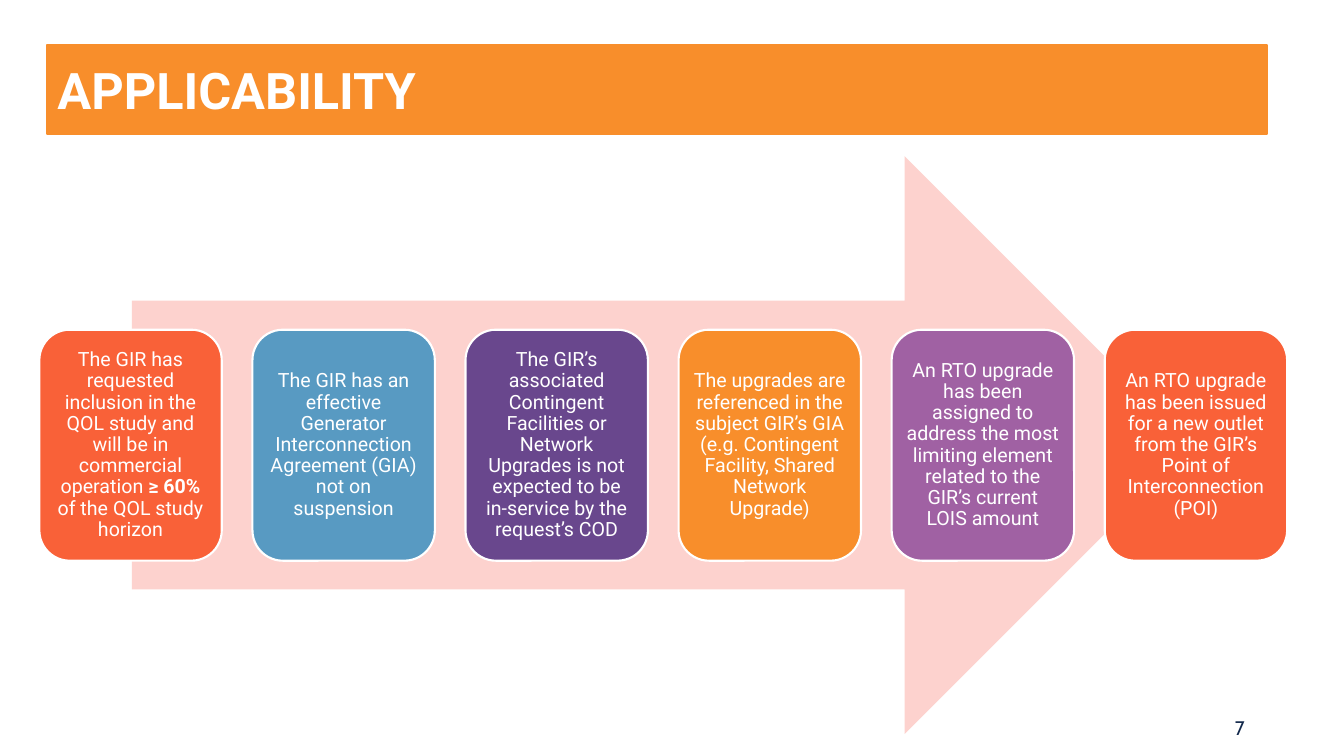
from dataclasses import dataclass

from lxml import etree
from pptx import Presentation
from pptx import util as u
from pptx.dml.color import RGBColor
from pptx.enum import shapes, text
from pptx.oxml.ns import qn


@dataclass(frozen=True)
class Theme:
    orange: str = "F88E2B"
    coral: str = "F96138"
    blue: str = "589AC2"
    purple: str = "69478D"
    violet: str = "A061A3"
    pink: str = "FDD2CE"
    navy: str = "12284B"
    white: str = "FFFFFF"
    font: str = "Roboto"
    number_font: str = "Cabin"
    title_size: float = 36
    body_size: float = 14
    outline: float = 1.5


@dataclass(frozen=True)
class Box:
    left: float
    top: float
    width: float
    height: float

    def lengths(self):
        return [u.Pt(n) for n in (self.left, self.top, self.width, self.height)]


THEME = Theme()
CONDITIONS = [
    (THEME.coral, [("The GIR has requested inclusion in the QOL study and will be "
                    "in commercial operation ", False),
                   ("≥ 60%", True), (" of the QOL study horizon", False)]),
    (THEME.blue, [("The GIR has an effective Generator Interconnection Agreement "
                   "(GIA) not on suspension", False)]),
    (THEME.purple, [("The GIR’s associated Contingent Facilities or Network Upgrades "
                     "is not expected to be in-service by the request’s COD", False)]),
    (THEME.orange, [("The upgrades are referenced in the subject GIR’s GIA (e.g. "
                     "Contingent Facility, Shared Network Upgrade)", False)]),
    (THEME.violet, [("An RTO upgrade has been assigned to address the most limiting "
                     "element related to the GIR’s current LOIS amount", False)]),
    (THEME.coral, [("An RTO upgrade has been issued for a new outlet from the GIR’s "
                    "Point of Interconnection (POI)", False)]),
]


def apply(target, values):
    for name, value in values.items():
        setattr(target, name, value)


def paint(shape, fill, line=None):
    shape.fill.solid()
    shape.fill.fore_color.rgb = RGBColor.from_string(fill)
    if line is None:
        shape.line.fill.background()
    else:
        shape.line.color.rgb = RGBColor.from_string(line)
        shape.line.width = u.Pt(THEME.outline)


def write(shape, runs, size, color, font, align, anchor, margins, spacing=1.0):
    horizontal, vertical = margins
    frame = shape.text_frame
    apply(frame, {
        "word_wrap": True,
        "auto_size": text.MSO_AUTO_SIZE.NONE,
        "vertical_anchor": anchor,
        "margin_left": u.Pt(horizontal),
        "margin_right": u.Pt(horizontal),
        "margin_top": u.Pt(vertical),
        "margin_bottom": u.Pt(vertical),
    })
    paragraph = frame.paragraphs[0]
    apply(paragraph, {"alignment": align, "line_spacing": spacing})
    for words, bold in runs:
        run = paragraph.add_run()
        run.text = words
        apply(run.font, {"name": font, "size": u.Pt(size), "bold": bold})
        run.font.color.rgb = RGBColor.from_string(color)


def add_title(slide, box):
    title = slide.shapes.title
    apply(title, dict(zip(("left", "top", "width", "height"), box.lengths())))
    geometry = etree.SubElement(title.element.spPr, qn("a:prstGeom"), prst="roundRect")
    etree.SubElement(geometry, qn("a:avLst"))
    paint(title, THEME.orange, THEME.orange)
    write(title, [("APPLICABILITY", True)], THEME.title_size, THEME.white, THEME.font,
          text.PP_ALIGN.LEFT, text.MSO_ANCHOR.MIDDLE, (7.2, 3.6))


def add_arrow(slide, box):
    arrow = slide.shapes.add_shape(shapes.MSO_SHAPE.RIGHT_ARROW, *box.lengths())
    arrow.shadow.inherit = False
    paint(arrow, THEME.pink)


def add_condition(slide, box, fill, runs):
    card = slide.shapes.add_shape(shapes.MSO_SHAPE.ROUNDED_RECTANGLE, *box.lengths())
    card.shadow.inherit = False
    paint(card, fill, THEME.white)
    write(card, runs, THEME.body_size, THEME.white, THEME.font,
          text.PP_ALIGN.CENTER, text.MSO_ANCHOR.MIDDLE, (4.2, 4.2), 0.9)


def add_conditions(slide, box, card_width):
    pitch = (box.width - card_width) / (len(CONDITIONS) - 1)
    for index, (fill, runs) in enumerate(CONDITIONS):
        card_box = Box(box.left + index * pitch, box.top, card_width, box.height)
        add_condition(slide, card_box, fill, runs)


def add_page_number(slide, box):
    number = slide.shapes.add_textbox(*box.lengths())
    write(number, [("7", False)], THEME.body_size, THEME.navy, THEME.number_font,
          text.PP_ALIGN.CENTER, text.MSO_ANCHOR.BOTTOM, (2.2, 3.6))


def main():
    presentation = Presentation()
    apply(presentation, {"slide_width": u.Pt(960), "slide_height": u.Pt(540)})
    slide = presentation.slides.add_slide(presentation.slide_layouts[5])
    add_title(slide, Box(33.8, 32.4, 871.2, 63.4))
    add_page_number(slide, Box(871.2, 501.8, 28.8, 30.2))
    add_arrow(slide, Box(94.3, 111.6, 758.2, 412.6))
    add_conditions(slide, Box(28.1, 235.5, 891.3, 165), 130.3)
    presentation.save("out.pptx")


if __name__ == "__main__":
    main()
